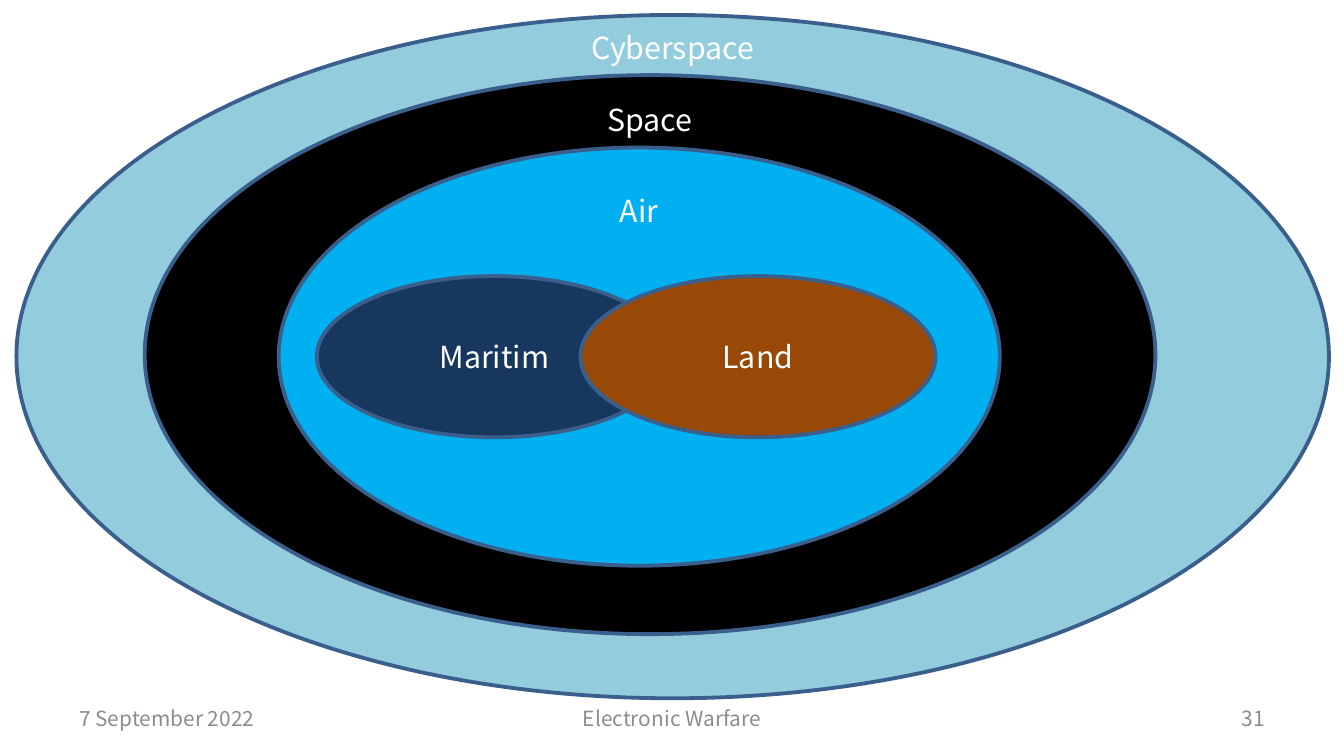
from dataclasses import dataclass

from pptx import Presentation
from pptx import util as u
from pptx.dml.color import RGBColor
from pptx.enum import shapes, text


@dataclass(frozen=True)
class Theme:
    font: str = "Noto Sans CJK SC"
    label_size: int = 16
    footer_size: int = 11
    label: str = "FFFFFF"
    footer: str = "8C8C8C"
    outline: str = "3A5F8C"
    cyberspace: str = "93CDDD"
    space: str = "000000"
    air: str = "00B0F0"
    maritime: str = "17375E"
    land: str = "984807"


class DomainSlide:
    cell = u.Inches(0.1)

    def __init__(self, presentation, theme):
        self.theme = theme
        self.slide = presentation.slides.add_slide(presentation.slide_layouts[6])

    def box(self, center, middle, columns, rows):
        return [round(value * self.cell) for value in
                (center - columns / 2, middle - rows / 2, columns, rows)]

    def add_words(self, shape, words, size, color, alignment):
        frame = shape.text_frame
        frame.word_wrap = True
        frame.vertical_anchor = text.MSO_ANCHOR.MIDDLE
        frame.margin_top = frame.margin_bottom = u.Inches(0.04)
        frame.margin_left = frame.margin_right = u.Inches(0.09)
        paragraph = frame.paragraphs[0]
        paragraph.alignment = alignment
        run = paragraph.add_run()
        run.text = words
        run.font.name = self.theme.font
        run.font.size = u.Pt(size)
        run.font.color.rgb = RGBColor.from_string(color)

    def ellipse(self, center, middle, columns, rows, fill):
        shape = self.slide.shapes.add_shape(
            shapes.MSO_SHAPE.OVAL, *self.box(center, middle, columns, rows))
        shape.shadow.inherit = False
        shape.fill.solid()
        shape.fill.fore_color.rgb = RGBColor.from_string(fill)
        shape.line.color.rgb = RGBColor.from_string(self.theme.outline)
        shape.line.width = u.Pt(2)
        return shape

    def label(self, shape, words):
        self.add_words(shape, words, self.theme.label_size, self.theme.label,
                       text.PP_ALIGN.CENTER)

    def ring(self, words, label_row, center, middle, columns, rows, fill):
        self.ellipse(center, middle, columns, rows, fill)
        caption = self.slide.shapes.add_textbox(*self.box(center, label_row, 20, 4))
        self.label(caption, words)

    def domain(self, words, center, fill):
        self.label(self.ellipse(center, 26.1, 26, 11.8, fill), words)

    def footer(self, words, center, columns, alignment):
        caption = self.slide.shapes.add_textbox(*self.box(center, 52.55, columns, 2.9))
        self.add_words(caption, words, self.theme.footer_size, self.theme.footer,
                       alignment)


def main():
    presentation = Presentation()
    presentation.slide_width = u.Inches(9.84)
    presentation.slide_height = u.Inches(5.51)
    theme = Theme()
    page = DomainSlide(presentation, theme)

    page.ring("Cyberspace", 3.5, 49.25, 26.1, 96.1, 50, theme.cyberspace)
    page.ring("Space", 8.75, 47.6, 25.95, 74, 40.9, theme.space)
    page.ring("Air", 15.4, 46.8, 26.1, 52.8, 30.6, theme.air)

    page.domain("Maritim", 36.2, theme.maritime)
    page.domain("Land", 55.5, theme.land)

    footers = [
        ("7 September 2022", 23, text.PP_ALIGN.LEFT),
        ("Electronic Warfare", 31.2, text.PP_ALIGN.CENTER),
        ("31", 23, text.PP_ALIGN.RIGHT),
    ]
    third = 98.4 / len(footers)
    for index, (words, columns, alignment) in enumerate(footers):
        page.footer(words, (index + 0.5) * third, columns, alignment)

    presentation.save("out.pptx")


if __name__ == "__main__":
    main()
